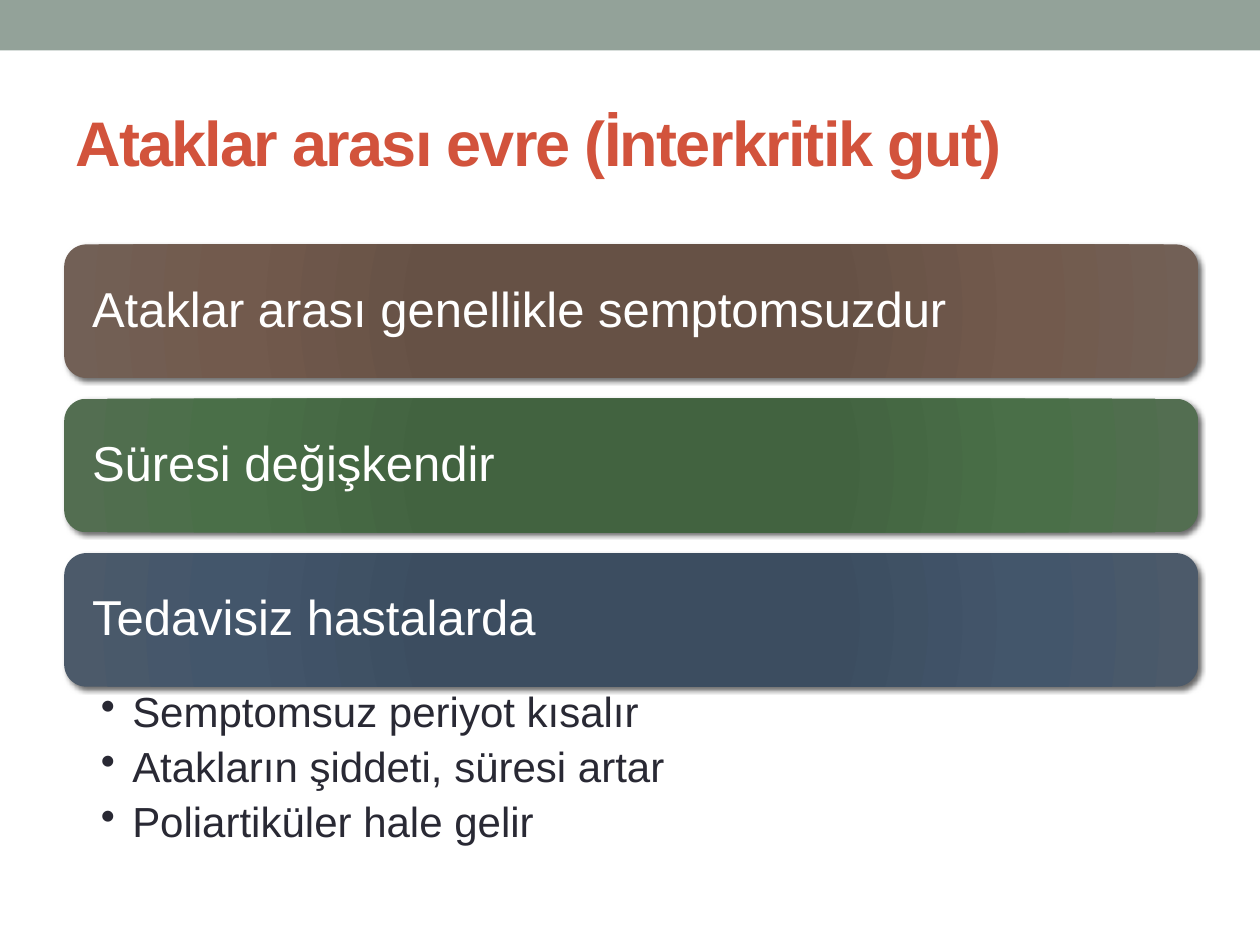
from pptx import Presentation
from pptx.dml.color import RGBColor
from pptx.enum.shapes import MSO_SHAPE as SHAPE
from pptx.enum.text import MSO_ANCHOR as ANCHOR, PP_ALIGN as ALIGN
from pptx.oxml import parse_xml
from pptx.oxml.ns import nsdecls, qn
from pptx.util import Inches, Pt

FONT = "Arial"
LEFT, WIDTH = 0.51, 9
CARD_TOP, CARD_HEIGHT, CARD_PITCH = 1.94, 1.06, 1.225
STOPS = (0, 34, 70, 100)
CARDS = [
    ("Ataklar arası genellikle semptomsuzdur", ("685044", "665145", "725A4D", "726056")),
    ("Süresi değişkendir", ("41643F", "426340", "4A6F48", "536E51")),
    ("Tedavisiz hastalarda", ("3B4D61", "3C4D60", "43566B", "4C5A6A")),
]
BULLETS = [
    "Semptomsuz periyot kısalır",
    "Atakların şiddeti, süresi artar",
    "Poliartiküler hale gelir",
]


def rgb(value):
    return RGBColor.from_string(value)


def set_frame(tf, anchor, left, top, right, bottom):
    tf.word_wrap = True
    tf.vertical_anchor = anchor
    tf.margin_left, tf.margin_top = Inches(left), Inches(top)
    tf.margin_right, tf.margin_bottom = Inches(right), Inches(bottom)


def style_paragraph(p, size, color, bold=False):
    p.alignment = ALIGN.LEFT
    for r in p.runs:
        r.font.name, r.font.size, r.font.bold = FONT, Pt(size), bold
        r.font.color.rgb = rgb(color)


def add_box(slide, kind, left, top, width, height):
    sp = slide.shapes.add_shape(
        kind, Inches(left), Inches(top), Inches(width), Inches(height))
    sp.shadow.inherit = False
    sp.line.fill.background()
    return sp


def set_radial_fill(sp, colors):
    sp.fill.gradient()
    stops = "".join(
        f'<a:gs pos="{pos * 1000}"><a:srgbClr val="{color}"/></a:gs>'
        for pos, color in zip(STOPS, colors))
    new = parse_xml(
        f'<a:gradFill {nsdecls("a")} rotWithShape="1"><a:gsLst>{stops}</a:gsLst>'
        '<a:path path="circle"><a:fillToRect l="100000" t="100000" r="100000" '
        'b="100000"/></a:path></a:gradFill>')
    spPr = sp._element.spPr
    spPr.replace(spPr.find(qn("a:gradFill")), new)


def add_shadow(sp):
    effects = sp._element.spPr.find(qn("a:effectLst"))
    effects.append(parse_xml(
        f'<a:outerShdw {nsdecls("a")} blurRad="{Pt(3)}" dist="{Pt(2)}" dir="2700000" '
        'rotWithShape="0"><a:srgbClr val="000000"><a:alpha val="60000"/></a:srgbClr>'
        '</a:outerShdw>'))


def add_title(slide, text):
    sp = slide.shapes.add_textbox(Inches(0.5), Inches(0.58), Inches(9), Inches(1.08))
    set_frame(sp.text_frame, ANCHOR.MIDDLE, 0.1, 0.05, 0.1, 0.05)
    sp.text_frame.text = text
    p = sp.text_frame.paragraphs[0]
    style_paragraph(p, 36, "D2533C", bold=True)
    p.runs[0].font._element.set("spc", "-100")


def add_card(slide, top, text, colors):
    sp = add_box(slide, SHAPE.ROUNDED_RECTANGLE, LEFT, top, WIDTH, CARD_HEIGHT)
    set_radial_fill(sp, colors)
    add_shadow(sp)
    set_frame(sp.text_frame, ANCHOR.MIDDLE, 0.17, 0.17, 0.17, 0.17)
    sp.text_frame.text = text
    p = sp.text_frame.paragraphs[0]
    p.line_spacing = 0.9
    style_paragraph(p, 28, "FFFFFF")


def add_bullets(slide, items):
    sp = slide.shapes.add_textbox(Inches(LEFT), Inches(5.46), Inches(WIDTH), Inches(1.27))
    tf = sp.text_frame
    set_frame(tf, ANCHOR.TOP, 0.29, 0.03, 0.19, 0.03)
    tf.text = "\n".join(items)
    for p in tf.paragraphs:
        p.level = 1
        p.line_spacing = 0.9
        p.space_after = Pt(5.5)
        pPr = p._p.get_or_add_pPr()
        pPr.set("marL", str(Inches(0.25)))
        pPr.set("indent", str(Inches(-0.25)))
        pPr.append(parse_xml(f'<a:buChar {nsdecls("a")} char="•"/>'))
        style_paragraph(p, 24, "292934")


def main():
    prs = Presentation()
    prs.slide_width, prs.slide_height = Inches(10), Inches(7.5)
    slide = prs.slides.add_slide(prs.slide_layouts[6])

    # Top band and title
    band = add_box(slide, SHAPE.RECTANGLE, 0, 0, 10, 0.4)
    band.fill.solid()
    band.fill.fore_color.rgb = rgb("93A299")
    add_title(slide, "Ataklar arası evre (İnterkritik gut)")

    # Cards, with details under the last one
    for i, (text, colors) in enumerate(CARDS):
        add_card(slide, CARD_TOP + i * CARD_PITCH, text, colors)
    add_bullets(slide, BULLETS)

    prs.save("out.pptx")


if __name__ == "__main__":
    main()
